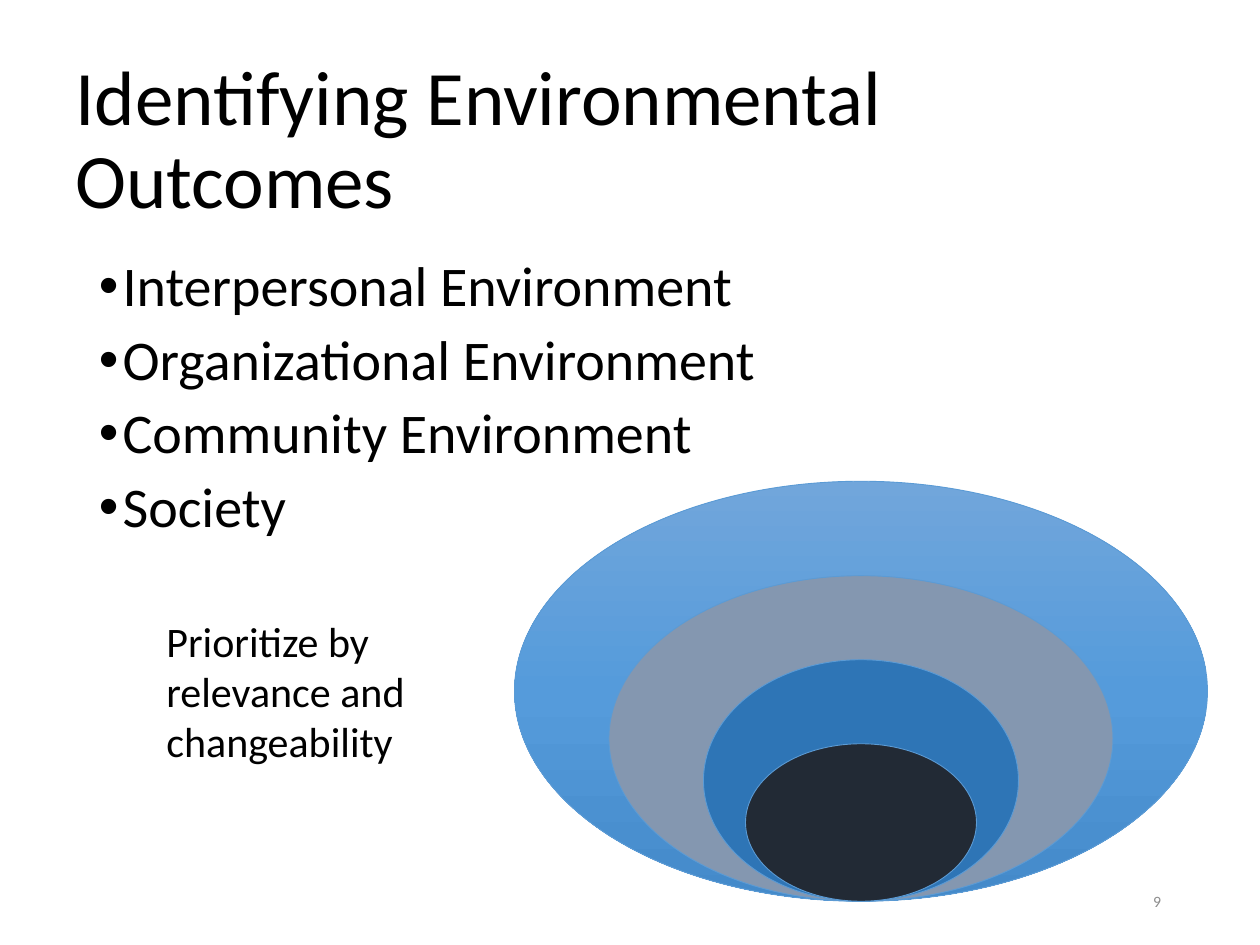
from copy import deepcopy
from dataclasses import dataclass

from lxml import etree
from pptx import Presentation
from pptx.dml.color import RGBColor
from pptx.enum.shapes import MSO_SHAPE
from pptx.enum.text import MSO_ANCHOR, PP_ALIGN
from pptx.oxml.ns import qn
from pptx.util import Pt

ELLIPSE = MSO_SHAPE.OVAL
TOP, MIDDLE = MSO_ANCHOR.TOP, MSO_ANCHOR.MIDDLE
LEFT, RIGHT = PP_ALIGN.LEFT, PP_ALIGN.RIGHT

FONT = "Calibri"
BLACK = RGBColor(0x00, 0x00, 0x00)
GREY = RGBColor(0x8C, 0x8C, 0x8C)
OUTLINE = RGBColor(0x5B, 0x9B, 0xD5)
SKY_TOP = RGBColor(0x71, 0xA6, 0xDB)
SKY_MIDDLE = RGBColor(0x55, 0x9B, 0xDB)
SKY_BOTTOM = RGBColor(0x44, 0x8A, 0xCA)
SLATE = RGBColor(0x84, 0x97, 0xB0)
BLUE = RGBColor(0x2E, 0x75, 0xB6)
NAVY = RGBColor(0x22, 0x2A, 0x35)

# All ellipses share a centre line and a bottom edge
ELLIPSE_CENTRE = 492
ELLIPSE_BOTTOM = 515
BULLET_INDENT = 13.5


@dataclass
class TextBlock:
    left: float
    top: float
    width: float
    height: float
    lines: list[str]
    size: float
    color: RGBColor = BLACK
    anchor: MSO_ANCHOR = TOP
    align: PP_ALIGN = LEFT
    line_spacing: float = 1.0
    space_before: float = 0
    bulleted: bool = False


@dataclass
class Level:
    width: float
    height: float
    colors: list[RGBColor]


TEXT_BLOCKS = [
    # Title
    TextBlock(36, 29, 666, 104, ["Identifying Environmental Outcomes"], 44,
              anchor=MIDDLE, line_spacing=0.9),
    # Slide number
    TextBlock(508.5, 500.5, 162, 28.75, ["9"], 9, GREY, MIDDLE, RIGHT),
    # Environments
    TextBlock(49.5, 144, 621, 342.5,
              ["Interpersonal Environment", "Organizational Environment",
               "Community Environment", "Society"],
              32, line_spacing=0.9, space_before=7.5, bulleted=True),
    # Advice
    TextBlock(88, 348, 187, 94.5,
              ["Prioritize by relevance and changeability"], 24),
]

# From the outermost level inwards
LEVELS = [
    Level(396, 240, [SKY_TOP, SKY_MIDDLE, SKY_BOTTOM]),
    Level(288, 186, [SLATE]),
    Level(180, 138, [BLUE]),
    Level(132, 90, [NAVY]),
]


def add_bullet(paragraph) -> None:
    properties = paragraph._p.get_or_add_pPr()
    properties.set("marL", str(Pt(BULLET_INDENT)))
    properties.set("indent", str(-Pt(BULLET_INDENT)))
    etree.SubElement(properties, qn("a:buFont")).set("typeface", "Arial")
    etree.SubElement(properties, qn("a:buChar")).set("char", "•")


def add_text(slide, block: TextBlock) -> None:
    shape = slide.shapes.add_textbox(Pt(block.left), Pt(block.top),
                                     Pt(block.width), Pt(block.height))
    frame = shape.text_frame
    frame.word_wrap = True
    frame.vertical_anchor = block.anchor
    for index, line in enumerate(block.lines):
        paragraph = frame.add_paragraph() if index else frame.paragraphs[0]
        paragraph.alignment = block.align
        paragraph.line_spacing = block.line_spacing
        paragraph.space_before = Pt(block.space_before)
        if block.bulleted:
            add_bullet(paragraph)
        run = paragraph.add_run()
        run.text = line
        run.font.name = FONT
        run.font.size = Pt(block.size)
        run.font.color.rgb = block.color


def fill_gradient(shape, colors: list[RGBColor]) -> None:
    """Fill from top to bottom with evenly spaced colours."""
    fill = shape.fill
    fill.gradient()
    fill.gradient_angle = 270
    stop_list = shape._element.spPr.find(".//" + qn("a:gsLst"))
    while len(stop_list) < len(colors):
        stop_list.append(deepcopy(stop_list[-1]))
    for index, (stop, color) in enumerate(zip(fill.gradient_stops, colors)):
        stop.position = index / (len(colors) - 1)
        stop.color.rgb = color


def add_level(slide, level: Level) -> None:
    shape = slide.shapes.add_shape(
        ELLIPSE, Pt(ELLIPSE_CENTRE - level.width / 2),
        Pt(ELLIPSE_BOTTOM - level.height), Pt(level.width), Pt(level.height))
    shape.shadow.inherit = False
    if len(level.colors) > 1:
        fill_gradient(shape, level.colors)
    else:
        shape.fill.solid()
        shape.fill.fore_color.rgb = level.colors[0]
    shape.line.color.rgb = OUTLINE
    shape.line.width = Pt(0.5)


def main() -> None:
    presentation = Presentation()
    presentation.slide_width = Pt(720)
    presentation.slide_height = Pt(540)
    slide = presentation.slides.add_slide(presentation.slide_layouts[6])
    for block in TEXT_BLOCKS:
        add_text(slide, block)
    for level in LEVELS:
        add_level(slide, level)
    presentation.save("out.pptx")


if __name__ == "__main__":
    main()
